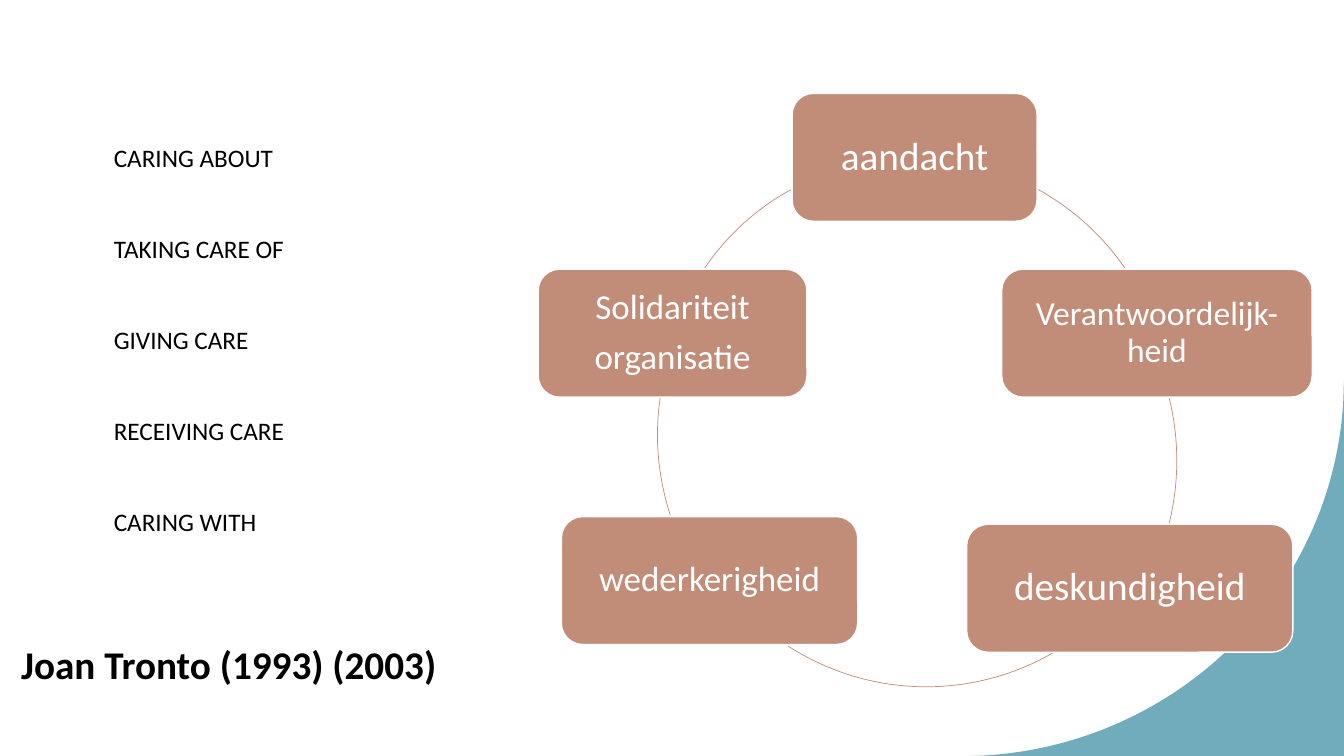
from dataclasses import dataclass

import lxml.etree
import pptx
import pptx.dml.color
import pptx.enum.shapes
import pptx.enum.text
import pptx.oxml.ns
import pptx.util

Pt = pptx.util.Pt
Point = tuple[float, float]

FONT = "Calibri"
BLACK, WHITE, TERRACOTTA, TEAL = "000000", "FFFFFF", "C18C78", "70ACBC"
BOX_HEIGHT = 91.4
CIRCLE_SIZE = 363.6


@dataclass(frozen=True)
class PhaseBox:
    lines: tuple[str, ...]
    left: float
    top: float
    width: float
    font_size: float


@dataclass(frozen=True)
class Outline:
    """Straight corners followed by one cubic curve, inside a frame."""
    left: float
    top: float
    width: float
    height: float
    corners: tuple[Point, ...]
    curve: tuple[Point, Point, Point]
    closed: bool = False


def arc(left: float, top: float, start: Point, *curve: Point) -> Outline:
    return Outline(left, top, CIRCLE_SIZE, CIRCLE_SIZE, (start,), curve)


CARE_PHASES = ("CARING ABOUT", "TAKING CARE OF", "GIVING CARE", "RECEIVING CARE", "CARING WITH")

PHASE_BOXES = (
    PhaseBox(("aandacht",), 565.8, 66.7, 175, 28),
    PhaseBox(("Verantwoordelijk-heid",), 715.5, 192.3, 221.8, 24),
    PhaseBox(("deskundigheid",), 690.5, 374.5, 233, 28),
    PhaseBox(("wederkerigheid",), 401, 369, 211.7, 25),
    PhaseBox(("Solidariteit", "organisatie"), 384.4, 192.3, 192, 25),
)

CYCLE_ARCS = (
    arc(471.6, 112.3, (741.6, 135.4), (766.1, 149), (787.7, 168.5), (803.5, 191.5)),
    arc(476.6, 146.9, (835.2, 284.4), (842.4, 313.9), (842.4, 344.2), (835.2, 373.7)),
    arc(480.2, 126.7, (751.7, 466.6), (692.6, 500.4), (619.9, 498.2), (563, 461.5)),
    arc(469.4, 128.9, (478.8, 367.9), (470.2, 341.3), (467.3, 312.5), (471.6, 284.4)),
    arc(471.6, 112.3, (503.3, 191.5), (519.1, 168.5), (540, 149), (565.2, 135.4)),
)

CORNER = Outline(
    693.2, 272, 266.8, 268,
    ((960, 272), (960, 540), (693.2, 540), (699.1, 539.9)),
    ((840.2, 533.5), (952.6, 422.6), (959.6, 285.1)), closed=True)


def color(value: str) -> pptx.dml.color.RGBColor:
    return pptx.dml.color.RGBColor.from_string(value)


def fill_text(text_frame, lines: tuple[str, ...], size: float, font_color: str,
              gap: float = 0, bold: bool = False) -> None:
    text_frame.word_wrap = True
    text_frame.text = "\n".join(lines)
    for index, paragraph in enumerate(text_frame.paragraphs):
        if index:
            paragraph.space_before = Pt(gap)
        for run in paragraph.runs:
            run.font.name = FONT
            run.font.size = Pt(size)
            run.font.bold = bold
            run.font.color.rgb = color(font_color)


def add_text(slide, left: float, top: float, width: float, height: float,
             lines: tuple[str, ...], size: float, gap: float = 0, bold: bool = False) -> None:
    shape = slide.shapes.add_textbox(Pt(left), Pt(top), Pt(width), Pt(height))
    fill_text(shape.text_frame, lines, size, BLACK, gap, bold)


def add_outline(slide, outline: Outline):
    # The diagonal sets the frame; the drawing commands then replace it
    builder = slide.shapes.build_freeform(Pt(outline.left), Pt(outline.top))
    builder.add_line_segments(
        [(Pt(outline.left + outline.width), Pt(outline.top + outline.height))], close=False)
    shape = builder.convert_to_shape()
    shape.shadow.inherit = False
    geometry = shape._element.xpath(".//a:pathLst/a:path")[0]
    for command in list(geometry):
        geometry.remove(command)

    def add_command(name: str, *points: Point) -> None:
        command = lxml.etree.SubElement(geometry, pptx.oxml.ns.qn(name))
        for x, y in points:
            lxml.etree.SubElement(command, pptx.oxml.ns.qn("a:pt"), {
                "x": str(int(Pt(x - outline.left))), "y": str(int(Pt(y - outline.top)))})

    add_command("a:moveTo", outline.corners[0])
    for corner in outline.corners[1:]:
        add_command("a:lnTo", corner)
    add_command("a:cubicBezTo", *outline.curve)
    if outline.closed:
        add_command("a:close")
    return shape


def add_arc(slide, outline: Outline) -> None:
    shape = add_outline(slide, outline)
    shape.fill.background()
    shape.line.color.rgb = color(TERRACOTTA)
    shape.line.width = Pt(0.5)


def add_phase_box(slide, box: PhaseBox) -> None:
    shape = slide.shapes.add_shape(
        pptx.enum.shapes.MSO_SHAPE.ROUNDED_RECTANGLE,
        Pt(box.left), Pt(box.top), Pt(box.width), Pt(BOX_HEIGHT))
    shape.shadow.inherit = False
    shape.fill.solid()
    shape.fill.fore_color.rgb = color(TERRACOTTA)
    shape.line.color.rgb = color(WHITE)
    shape.line.width = Pt(1)
    text_frame = shape.text_frame
    text_frame.vertical_anchor = pptx.enum.text.MSO_ANCHOR.MIDDLE
    text_frame.margin_left = text_frame.margin_right = Pt(8)
    text_frame.margin_top = text_frame.margin_bottom = Pt(8)
    fill_text(text_frame, box.lines, box.font_size, WHITE, gap=0.35 * box.font_size)
    for paragraph in text_frame.paragraphs:
        paragraph.alignment = pptx.enum.text.PP_ALIGN.CENTER
        paragraph.line_spacing = 0.9


def main() -> None:
    presentation = pptx.Presentation()
    presentation.slide_width, presentation.slide_height = Pt(960), Pt(540)
    slide = presentation.slides.add_slide(presentation.slide_layouts[6])

    # Teal corner
    corner = add_outline(slide, CORNER)
    corner.fill.solid()
    corner.fill.fore_color.rgb = color(TEAL)
    corner.line.fill.background()

    # Care phases on the left
    add_text(slide, 74.2, 98.2, 796.3, 291, CARE_PHASES, 18, gap=43.3)

    # Cycle of phases
    for cycle_arc in CYCLE_ARCS:
        add_arc(slide, cycle_arc)
    for box in PHASE_BOXES:
        add_phase_box(slide, box)

    # Author
    add_text(slide, 8, 453.6, 355.7, 41, ("Joan Tronto (1993) (2003)",), 28, bold=True)

    presentation.save("out.pptx")


if __name__ == "__main__":
    main()
